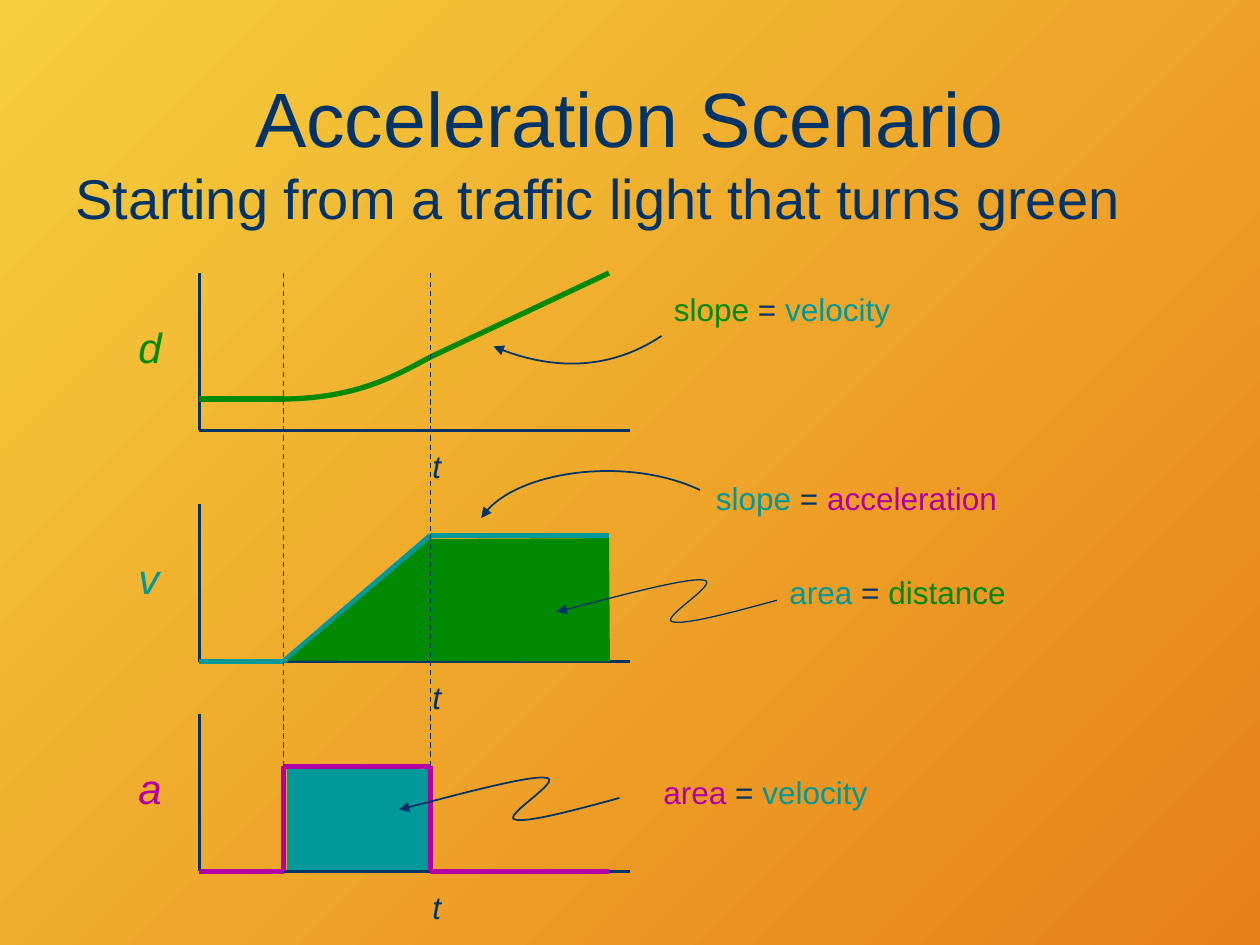
from lxml.etree import SubElement
from pptx import Presentation
from pptx.dml.color import RGBColor
from pptx.enum.dml import MSO_LINE_DASH_STYLE as DASH
from pptx.enum.shapes import MSO_CONNECTOR, MSO_SHAPE
from pptx.enum.text import MSO_ANCHOR, MSO_AUTO_SIZE, PP_ALIGN
from pptx.oxml.ns import qn
from pptx.util import Pt

NAVY = RGBColor(0x00, 0x33, 0x66)
GREEN = RGBColor(0x00, 0x89, 0x01)
TEAL = RGBColor(0x00, 0x99, 0x99)
PURPLE = RGBColor(0xB3, 0x00, 0xA4)
YELLOW = RGBColor(0xF5, 0xCE, 0x3D)
ORANGE = RGBColor(0xE8, 0x80, 0x18)

# Shared time marks: axis origin, start and end of acceleration, curve end, axis end
ORIGIN, START, STOP, END, AXIS_END = 114, 162, 246, 348, 360
AXIS_HEIGHT = 90
SQUIGGLE = [(0, 0), (-26.6, 7.2), (-53.3, 14.4), (-60, 12.2), (-66.7, 10),
            (-31, -10.8), (-42.3, -11.6), (-53.3, -13), (-112.3, 3.6), (-126, 6.5)]


class SlideBuilder:
    font = "Arial"

    def __init__(self, slide):
        self.slide = slide
        self.shapes = slide.shapes

    def background(self, first, last):
        fill = self.slide.background.fill
        fill.gradient()
        fill.gradient_angle = 315
        for stop, color, position in zip(fill.gradient_stops, (first, last), (0, 1)):
            stop.color.rgb = color
            stop.position = position

    def text(self, x, y, w, h, parts, size, italic=False, wrap=True, grow=True):
        """Add one paragraph made of (text, colour) parts."""
        tf = self.shapes.add_textbox(Pt(x), Pt(y), Pt(w), Pt(h)).text_frame
        tf.word_wrap = wrap
        tf.auto_size = MSO_AUTO_SIZE.SHAPE_TO_FIT_TEXT if grow else MSO_AUTO_SIZE.NONE
        p = tf.paragraphs[0]
        for words, color in parts:
            r = p.add_run()
            r.text = words
            r.font.name = self.font
            r.font.size = Pt(size)
            r.font.italic = italic
            r.font.color.rgb = color
        return tf

    def equation(self, x, y, w, left, right):
        self.text(x, y, w, 29, [left, (" = ", NAVY), right], 18, wrap=False)

    def line(self, start, end, color, width, dash=None):
        c = self.shapes.add_connector(MSO_CONNECTOR.STRAIGHT, *map(Pt, start + end))
        c.line.color.rgb = color
        c.line.width = Pt(width)
        if dash:
            c.line.dash_style = dash
        SubElement(c._element.spPr, qn("a:effectLst"))

    def polyline(self, points, color, width=3):
        for start, end in zip(points, points[1:]):
            self.line(start, end, color, width)

    def outline(self, points, close):
        points = [(Pt(x), Pt(y)) for x, y in points]
        builder = self.shapes.build_freeform(*points[0], scale=1.0)
        builder.add_line_segments(points[1:], close=close)
        sp = builder.convert_to_shape()
        sp.shadow.inherit = False
        return sp

    def area(self, points, color):
        sp = self.outline(points, True)
        sp.fill.solid()
        sp.fill.fore_color.rgb = color
        sp.line.fill.background()

    def curve(self, points, color, width, arrow=False):
        """Draw cubic Béziers: a start, then two controls and an end per piece."""
        sp = self.outline(points, False)
        sp.fill.background()
        sp.line.color.rgb = color
        sp.line.width = Pt(width)
        path = next(sp._element.iter(qn("a:path")))
        corners = path.findall(qn("a:lnTo"))
        for i in range(0, len(corners), 3):
            bezier = SubElement(path, qn("a:cubicBezTo"))
            for corner in corners[i:i + 3]:
                bezier.append(corner[0])
                path.remove(corner)
        if arrow:
            SubElement(sp._element.spPr.find(qn("a:ln")), qn("a:tailEnd"), type="triangle")

    def squiggle(self, x, y, width):
        self.curve([(x + dx, y + dy) for dx, dy in SQUIGGLE], NAVY, width, arrow=True)

    def rectangle(self, x, y, w, h, color):
        sp = self.shapes.add_shape(MSO_SHAPE.RECTANGLE, Pt(x), Pt(y), Pt(w), Pt(h))
        sp.shadow.inherit = False
        sp.fill.solid()
        sp.fill.fore_color.rgb = color
        sp.line.fill.background()

    def axes(self, name, color, top):
        base = top + AXIS_HEIGHT
        self.polyline([(ORIGIN, top), (ORIGIN, base), (AXIS_END, base)], NAVY, 2.25)
        self.text(72, top + 24, 31, 36, [(name, color)], 24, italic=True)
        self.text(240, top + 96, 31, 29, [("t", NAVY)], 18, italic=True)


def main():
    prs = Presentation()
    prs.slide_width, prs.slide_height = Pt(720), Pt(540)
    s = SlideBuilder(prs.slides.add_slide(prs.slide_layouts[6]))
    s.background(YELLOW, ORANGE)
    s.rectangle(164, 439, 81, 58.5, TEAL)

    title = s.text(36, 21.6, 648, 90, [("Acceleration Scenario", NAVY)], 44, grow=False)
    title.vertical_anchor = MSO_ANCHOR.MIDDLE
    title.paragraphs[0].alignment = PP_ALIGN.CENTER
    subtitle = s.text(36, 90, 636, 60,
                      [("Starting from a traffic light that turns green", NAVY)], 32, grow=False)
    subtitle.paragraphs[0].space_before = Pt(4)

    for name, color, top in (("d", GREEN, 156), ("v", TEAL, 288), ("a", PURPLE, 408)):
        s.axes(name, color, top)

    # Velocity
    s.polyline([(ORIGIN, 378), (START, 378), (STOP, 306), (END, 306)], TEAL)
    # Distance
    s.polyline([(ORIGIN, 228), (START, 228)], GREEN)
    s.curve([(START, 228), (205, 227.5), (227, 214), (STOP, 204)], GREEN, 3)
    s.polyline([(STOP, 204), (END, 156)], GREEN)
    # Acceleration
    s.polyline([(ORIGIN, 498), (START, 498), (START, 438), (STOP, 438),
                (STOP, 498), (END, 498)], PURPLE)

    s.equation(372, 438, 131, ("area", PURPLE), ("velocity", TEAL))
    s.squiggle(354, 456, 1)
    s.area([(164, 377.5), (246, 308), (348, 307.5), (348.5, 378)], GREEN)
    s.equation(444, 324, 138, ("area", TEAL), ("distance", GREEN))
    s.squiggle(444, 343, 0.75)
    s.equation(378, 162, 138, ("slope", GREEN), ("velocity", TEAL))
    s.curve([(378, 192), (348, 212), (312, 211), (282, 198)], NAVY, 1, arrow=True)
    s.equation(402, 270, 175, ("slope", TEAL), ("acceleration", PURPLE))
    s.curve([(400, 280), (360, 261), (292, 269), (275, 296)], NAVY, 1, arrow=True)

    for x in (START, STOP):
        s.line((x, 156), (x, 438), NAVY, 0.75, DASH.DASH)
    prs.save("out.pptx")


if __name__ == "__main__":
    main()
